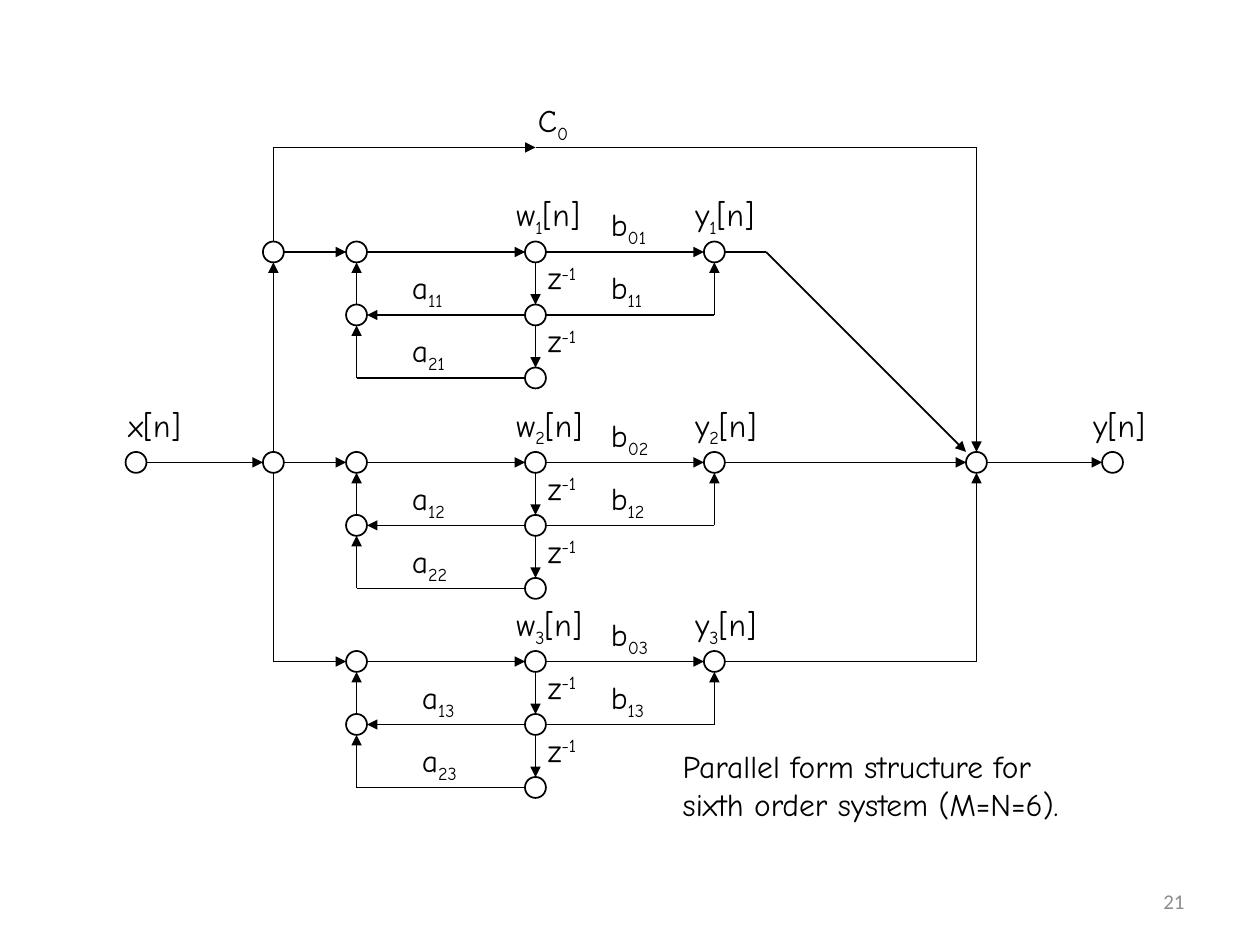
from pptx import Presentation
from pptx.dml.color import RGBColor
from pptx.enum import shapes, text
from pptx.oxml.ns import qn
from pptx.util import Inches, Pt
from lxml import etree

COLORS = {"ink": "000000", "paper": "FFFFFF", "number": "8C8C8C"}
RADIUS = 0.083
STEP = 0.5  # height of one delay
SUB, SUP = -25, 30

# columns and rows of the signal flow graph
X_IN, X_SPLIT, X_LOOP, X_DELAY, X_OUT, X_SUM, X_END = (
    1.08, 2.17, 2.83, 4.25, 5.67, 7.75, 8.83)
ROWS = (2, 3.67, 5.25)
TOP, MIDDLE, BOTTOM = ROWS
BYPASS = 1.17
BEND = 6.08


def rgb(name):
    return RGBColor.from_string(COLORS[name])


class FlowGraph:
    label_font = {"name": "Comic Neue", "size": Pt(18)}
    number_font = {"name": "Calibri", "size": Pt(12)}
    label_frame = {"word_wrap": False,
                   "auto_size": text.MSO_AUTO_SIZE.SHAPE_TO_FIT_TEXT}
    number_frame = {"word_wrap": True,
                    "vertical_anchor": text.MSO_ANCHOR.MIDDLE}
    line_width = Pt(1)

    def __init__(self, slide):
        self.slide = slide
        self.nodes = set()

    def node(self, x, y):
        self.nodes.add((x, y))
        sp = self.slide.shapes.add_shape(
            shapes.MSO_SHAPE.OVAL, Inches(x - RADIUS), Inches(y - RADIUS),
            Inches(2 * RADIUS), Inches(2 * RADIUS))
        sp.shadow.inherit = False
        sp.fill.solid()
        sp.fill.fore_color.rgb = rgb("paper")
        sp.line.color.rgb = rgb("ink")
        sp.line.width = self.line_width

    def edge(self, point, toward):
        """Move a point from a node's centre to its edge."""
        if point not in self.nodes:
            return point
        return tuple(p + RADIUS * ((t > p) - (t < p))
                     for p, t in zip(point, toward))

    def line(self, start, end, arrow):
        ends = self.edge(start, end) + self.edge(end, start)
        cxn = self.slide.shapes.add_connector(
            shapes.MSO_CONNECTOR.STRAIGHT, *map(Inches, ends))
        cxn.line.color.rgb = rgb("ink")
        cxn.line.width = self.line_width
        if arrow:
            etree.SubElement(cxn.line._get_or_add_ln(), qn("a:tailEnd"),
                             type="triangle")
        etree.SubElement(cxn._element.spPr, qn("a:effectLst"))

    def wire(self, *points):
        """Join the points in turn, with an arrowhead at the last one."""
        last = len(points) - 2
        for i, (start, end) in enumerate(zip(points, points[1:])):
            self.line(start, end, arrow=i == last)

    def text(self, box, paragraphs, font, frame, color="ink", align=None):
        """Each paragraph is a list of (words, baseline shift) runs."""
        tf = self.slide.shapes.add_textbox(*map(Inches, box)).text_frame
        for name, value in frame.items():
            setattr(tf, name, value)
        for i, runs in enumerate(paragraphs):
            p = tf.add_paragraph() if i else tf.paragraphs[0]
            p.alignment = align
            for words, shift in runs:
                r = p.add_run()
                r.text = words
                for name, value in font.items():
                    setattr(r.font, name, value)
                r.font.color.rgb = rgb(color)
                if shift:
                    r._r.get_or_add_rPr().set("baseline", str(shift * 1000))

    def label(self, x, y, width, symbol, index="", rest="", shift=SUB):
        runs = [(symbol, 0), (index, shift), (rest, 0)]
        width -= 0.025 * index.count("1")  # the digit 1 is narrow
        self.text((x, y, width, 0.4), [[run for run in runs if run[0]]],
                  self.label_font, self.label_frame)

    def caption(self, box, lines):
        self.text(box, [[(line, 0)] for line in lines],
                  self.label_font, self.label_frame)

    def page_number(self, box, number):
        self.text(box, [[(number, 0)]], self.number_font, self.number_frame,
                  "number", text.PP_ALIGN.RIGHT)

    def section(self, number, y):
        """Draw one second order section with its coefficients."""
        y1, y2 = y + STEP, y + 2 * STEP
        loop, delay, out = (X_LOOP, y), (X_DELAY, y), (X_OUT, y)
        loop1, delay1, delay2 = (X_LOOP, y1), (X_DELAY, y1), (X_DELAY, y2)
        for point in (loop, delay, out, loop1, delay1, delay2):
            self.node(*point)
        self.wire(loop, delay)
        self.wire(delay, out)
        self.wire(delay, delay1)
        self.wire(delay1, delay2)
        self.wire(delay1, loop1)
        self.wire(loop1, loop)
        self.wire(delay2, (X_LOOP, y2), loop1)
        self.wire(delay1, (X_OUT, y1), out)

        k = str(number)
        x_a = 3.25 if y == BOTTOM else 3.17
        self.label(4, y - 0.5, 0.79, "w", k, "[n]")
        self.label(5.42, y - 0.5, 0.75, "y", k, "[n]")
        self.label(4.75, y - 0.42, 0.55, "b", "0" + k)
        self.label(4.75, y + 0.08, 0.55, "b", "1" + k)
        for i in range(2):
            top = y + i * STEP
            self.label(X_DELAY, top, 0.5, "z", "-1", shift=SUP)
            self.label(x_a, top + 0.08, 0.53, "a", f"{i + 1}{k}")


def main():
    prs = Presentation()
    prs.slide_width, prs.slide_height = Inches(10), Inches(7.5)
    graph = FlowGraph(prs.slides.add_slide(prs.slide_layouts[6]))

    source, split, branch = (X_IN, MIDDLE), (X_SPLIT, MIDDLE), (X_SPLIT, TOP)
    total, end = (X_SUM, MIDDLE), (X_END, MIDDLE)
    for point in (source, split, branch, total, end):
        graph.node(*point)
    for number, y in enumerate(ROWS, 1):
        graph.section(number, y)

    graph.wire(source, split)
    graph.wire(split, branch)
    graph.wire(branch, (X_LOOP, TOP))
    graph.wire(split, (X_LOOP, MIDDLE))
    graph.wire(split, (X_SPLIT, BOTTOM), (X_LOOP, BOTTOM))
    graph.wire(branch, (X_SPLIT, BYPASS), (X_DELAY, BYPASS))
    graph.wire((X_DELAY, BYPASS), (X_SUM, BYPASS), total)
    graph.wire((X_OUT, TOP), (BEND, TOP), total)
    graph.wire((X_OUT, MIDDLE), total)
    graph.wire((X_OUT, BOTTOM), (X_SUM, BOTTOM), total)
    graph.wire(total, end)

    graph.label(0.92, 3.17, 0.67, "x[n]")
    graph.label(8.58, 3.17, 0.65, "y[n]")
    graph.label(4.17, 0.75, 0.45, "C", "0")
    graph.caption((5.32, 5.88, 3.58, 0.7),
                  ["Parallel form structure for", "sixth order system (M=N=6)."])
    graph.page_number((7.17, 6.95, 2.33, 0.4), "21")
    prs.save("out.pptx")


if __name__ == "__main__":
    main()
